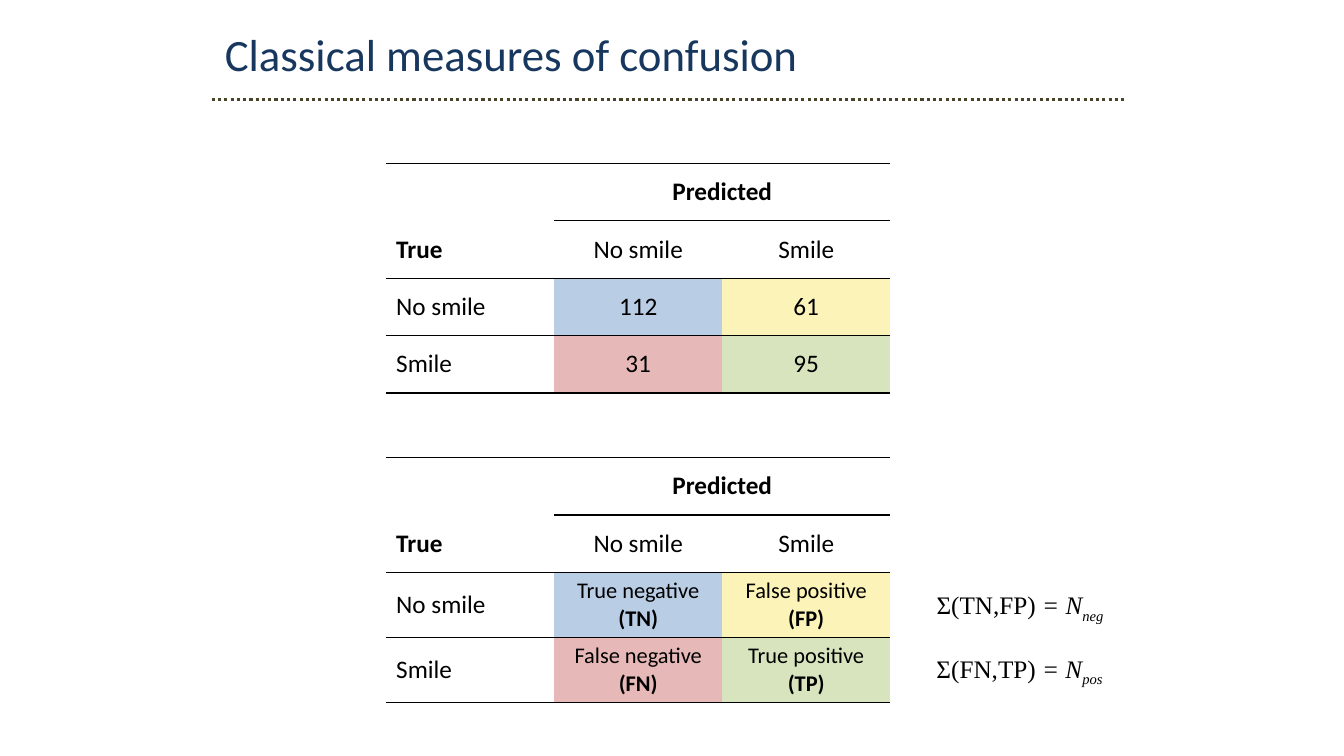
import pptx
import pptx.dml.color
import pptx.enum.dml
import pptx.enum.shapes
import pptx.enum.text
import pptx.oxml
import pptx.oxml.ns
import pptx.util
from pptx.util import Inches

COLORS = {
    "title": "17375E", "rule": "4A452A", "text": "000000",
    "true_negative": "B9CDE5", "false_positive": "FBF3B7",
    "false_negative": "E6B9B8", "true_positive": "D7E4BD",
}
OUTCOMES = [["true_negative", "false_positive"], ["false_negative", "true_positive"]]
CLASSES = ["No smile", "Smile"]
BODY = {"name": "Calibri", "size": pptx.util.Pt(18), "bold": False}
BOLD = {**BODY, "bold": True}
SMALL = {**BODY, "size": pptx.util.Pt(16)}
SMALL_BOLD = {**SMALL, "bold": True}
TITLE = {"name": "Calibri", "size": pptx.util.Pt(32)}
FORMULA = {"name": "Times New Roman", "size": pptx.util.Pt(18)}
ITALIC = {**FORMULA, "italic": True}
ALIGN = pptx.enum.text.PP_ALIGN
MIDDLE = pptx.enum.text.MSO_ANCHOR.MIDDLE


def rgb(name):
    return pptx.dml.color.RGBColor.from_string(COLORS[name])


def add_run(paragraph, text, formats, color="text"):
    run = paragraph.add_run()
    run.text = text
    for attribute, value in formats.items():
        setattr(run.font, attribute, value)
    run.font.color.rgb = rgb(color)
    return run


def set_borders(cell, visible_sides):
    """Draw the given sides (of L, R, T, B) and hide the others."""
    properties = cell._tc.get_or_add_tcPr()
    namespace = pptx.oxml.ns.nsdecls("a")
    for side in "LRTB":
        if side in visible_sides:
            paint = f'<a:solidFill><a:srgbClr val="{COLORS["text"]}"/></a:solidFill>'
        else:
            paint = "<a:noFill/>"
        properties.append(pptx.oxml.parse_xml(
            f'<a:ln{side} {namespace} w="12700">{paint}</a:ln{side}>'))


def fill_cell(cell, runs, alignment, fill=None):
    cell.vertical_anchor = MIDDLE
    paragraph = cell.text_frame.paragraphs[0]
    paragraph.alignment = alignment
    for text, formats in runs:
        add_run(paragraph, text, formats)
    if fill:
        cell.fill.solid()
        cell.fill.fore_color.rgb = rgb(fill)
    else:
        cell.fill.background()


def add_header(slide, left, top, width):
    title = slide.shapes.title
    title.left, title.top = left + Inches(0.03), top
    title.width, title.height = width - Inches(0.27), Inches(0.64)
    title.text_frame.vertical_anchor = MIDDLE
    paragraph = title.text_frame.paragraphs[0]
    paragraph.alignment = ALIGN.LEFT
    add_run(paragraph, "Classical measures of confusion", TITLE, "title")

    rule_top = top + Inches(0.78)
    rule = slide.shapes.add_connector(
        pptx.enum.shapes.MSO_CONNECTOR.STRAIGHT, left, rule_top, left + width, rule_top)
    rule.line.color.rgb = rgb("rule")
    rule.line.width = pptx.util.Pt(2.25)
    rule.line.dash_style = pptx.enum.dml.MSO_LINE.ROUND_DOT
    rule._element.spPr.append(pptx.oxml.parse_xml(
        f'<a:effectLst {pptx.oxml.ns.nsdecls("a")}/>'))


def add_confusion_table(slide, left, top, width, row_heights, outcomes):
    """Place a confusion matrix whose outcomes hold the runs of each of its four cells."""
    frame = slide.shapes.add_table(4, 3, left, top, width, sum(row_heights))
    table = frame.table
    table.first_row = table.horz_banding = False
    for column in table.columns:
        column.width = width // 3
    for row, height in zip(table.rows, row_heights):
        row.height = height

    contents = [
        [[], [("Predicted", BOLD)], []],
        [[("True", BOLD)]] + [[(name, BODY)] for name in CLASSES],
    ]
    contents += [[[(name, BODY)]] + cells for name, cells in zip(CLASSES, outcomes)]
    for row, cells in enumerate(contents):
        for column, runs in enumerate(cells):
            cell = table.cell(row, column)
            corner = row == 0 and column == 0
            below_corner = row == 1 and column == 0
            set_borders(cell, ("" if below_corner else "T") + ("" if corner else "B"))
            fill = OUTCOMES[row - 2][column - 1] if row > 1 and column else None
            fill_cell(cell, runs, ALIGN.CENTER if column else ALIGN.LEFT, fill)
    table.cell(0, 1).merge(table.cell(0, 2))


def add_sum_formula(slide, left, top, width, terms, subscript):
    box = slide.shapes.add_textbox(left, top, width, Inches(0.4))
    box.text_frame.word_wrap = False
    paragraph = box.text_frame.paragraphs[0]
    add_run(paragraph, f"Σ({terms}) ", FORMULA)
    add_run(paragraph, "= N", ITALIC)
    run = add_run(paragraph, subscript, ITALIC)
    run._r.get_or_add_rPr().set("baseline", "-25000")


def main():
    presentation = pptx.Presentation()
    presentation.slide_width, presentation.slide_height = Inches(13.33), Inches(7.5)
    slide = presentation.slides.add_slide(presentation.slide_layouts[5])

    add_header(slide, Inches(2.1), Inches(0.21), Inches(9.06))

    counts = [[[(str(count), BODY)] for count in row] for row in [[112, 61], [31, 95]]]
    labels = [
        [[(f"{name} ", SMALL), (f"({short})", SMALL_BOLD)] for name, short in row]
        for row in [
            [("True negative", "TN"), ("False positive", "FP")],
            [("False negative", "FN"), ("True positive", "TP")],
        ]
    ]
    left, width, height = Inches(3.83), Inches(5), Inches(0.57)
    add_confusion_table(slide, left, Inches(1.62), width, [height] * 4, counts)
    label_heights = [height] * 2 + [Inches(0.63)] * 2
    add_confusion_table(slide, left, Inches(4.54), width, label_heights, labels)

    add_sum_formula(slide, Inches(9.19), Inches(5.8), Inches(1.95), "TN,FP", "neg")
    add_sum_formula(slide, Inches(9.19), Inches(6.43), Inches(1.9), "FN,TP", "pos")
    presentation.save("out.pptx")


if __name__ == "__main__":
    main()
